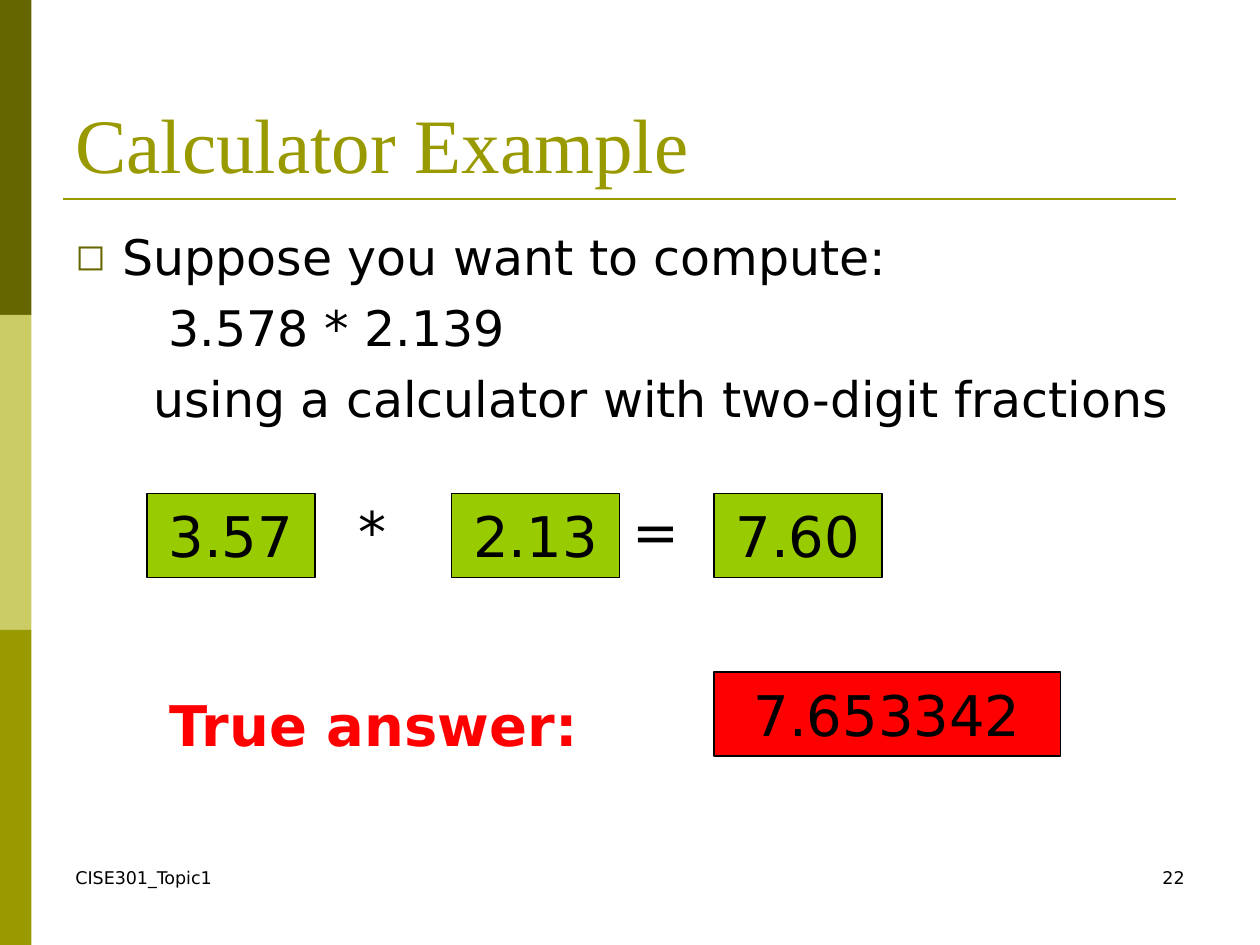
from lxml import etree
from pptx import Presentation
from pptx.dml.color import RGBColor
from pptx.enum.shapes import MSO_CONNECTOR, MSO_SHAPE
from pptx.enum.text import MSO_ANCHOR, PP_ALIGN
from pptx.oxml.ns import qn
from pptx.util import Pt

RECTANGLE = MSO_SHAPE.RECTANGLE
OVAL = MSO_SHAPE.OVAL
STRAIGHT = MSO_CONNECTOR.STRAIGHT
TOP, MIDDLE, BOTTOM = MSO_ANCHOR.TOP, MSO_ANCHOR.MIDDLE, MSO_ANCHOR.BOTTOM
LEFT, CENTER, RIGHT = PP_ALIGN.LEFT, PP_ALIGN.CENTER, PP_ALIGN.RIGHT

BLACK = RGBColor(0x00, 0x00, 0x00)
RED = RGBColor(0xFF, 0x00, 0x00)
GREEN = RGBColor(0x99, 0xCC, 0x00)
OLIVE = RGBColor(0x99, 0x99, 0x00)
DARK_OLIVE = RGBColor(0x66, 0x66, 0x00)
PALE_OLIVE = RGBColor(0xCC, 0xCC, 0x66)

SANS = "DejaVu Sans"
SERIF = "Times New Roman"
LINE_GAP = 6.8

TITLE = {"name": SERIF, "size": Pt(44)}
BODY = {"name": SANS, "size": Pt(28)}
NUMBER = {"name": SANS, "size": Pt(32)}
ANSWER = {"name": SANS, "size": Pt(32), "bold": True}
FOOTER = {"name": SANS, "size": Pt(10)}


def write(paragraph, text, style, color=BLACK, align=LEFT):
    paragraph.alignment = align
    run = paragraph.add_run()
    run.text = text
    for attribute, value in style.items():
        setattr(run.font, attribute, value)
    run.font.color.rgb = color


def add_frame(slide, box, anchor=TOP):
    frame = slide.shapes.add_textbox(*map(Pt, box)).text_frame
    frame.word_wrap = True
    frame.vertical_anchor = anchor
    return frame


def add_block(slide, kind, box, fill=None, outlined=False):
    block = slide.shapes.add_shape(kind, *map(Pt, box))
    block.shadow.inherit = False
    if fill is None:
        block.fill.background()
    else:
        block.fill.solid()
        block.fill.fore_color.rgb = fill
    if outlined:
        block.line.color.rgb = BLACK
        block.line.width = Pt(0.75)
    else:
        block.line.fill.background()
    return block


def add_number(slide, text, kind, box, fill=None):
    block = add_block(slide, kind, box, fill, outlined=fill is not None)
    frame = block.text_frame
    frame.word_wrap = False
    frame.vertical_anchor = MIDDLE
    write(frame.paragraphs[0], text, NUMBER, align=CENTER)


def add_sidebar(slide, box):
    left, top, width, height = box
    colors = (DARK_OLIVE, PALE_OLIVE, OLIVE)
    band = height / len(colors)
    for index, color in enumerate(colors):
        add_block(slide, RECTANGLE, (left, top + index * band, width, band), color)


def add_title(slide, box):
    left, top, width, height = box
    frame = add_frame(slide, box, BOTTOM)
    write(frame.paragraphs[0], "Calculator Example", TITLE, OLIVE)
    rule_y = Pt(top + height + 2.2)
    rule = slide.shapes.add_connector(
        STRAIGHT, Pt(left), rule_y, Pt(left + width - 12), rule_y)
    rule.line.color.rgb = OLIVE
    rule.line.width = Pt(1.5)
    etree.SubElement(rule._element.spPr, qn("a:effectLst"))


def indent(paragraph, margin, first_line=0):
    properties = paragraph._p.get_or_add_pPr()
    properties.set("marL", str(Pt(margin)))
    properties.set("indent", str(Pt(first_line)))
    return properties


def add_bullet(paragraph):
    properties = indent(paragraph, 27, -27)
    color = etree.SubElement(properties, qn("a:buClr"))
    etree.SubElement(color, qn("a:srgbClr"), val=str(DARK_OLIVE))
    etree.SubElement(properties, qn("a:buSzPct"), val="75000")
    etree.SubElement(properties, qn("a:buFont"), typeface=SANS)
    etree.SubElement(properties, qn("a:buChar"), char="◻")


def add_problem(slide, box):
    frame = add_frame(slide, box)
    question = frame.paragraphs[0]
    write(question, "Suppose you want to compute:", BODY)
    question.space_before = Pt(LINE_GAP)
    add_bullet(question)
    details = (("3.578 * 2.139", 53.4),
               ("using a calculator with two-digit fractions", 44.5))
    for text, margin in details:
        detail = frame.add_paragraph()
        write(detail, text, BODY)
        detail.space_before = Pt(LINE_GAP)
        indent(detail, margin)


def add_calculation(slide, box):
    left, top, width, height = box
    for text, offset in (("3.57", 0), ("2.13", 174), ("7.60", 324)):
        add_number(slide, text, RECTANGLE, (left + offset, top, 96, height), GREEN)
    for text, offset in (("*", 102), ("=", 264)):
        add_number(slide, text, OVAL, (left + offset, top, 54, height - 6))


def add_true_answer(slide, box):
    left, top, width, height = box
    label = add_frame(slide, (left, top + 7, 306, height - 3))
    write(label.paragraphs[0], "True answer:", ANSWER, RED)
    add_number(slide, "7.653342", RECTANGLE, (left + width - 198, top, 198, height), RED)


def add_footer(slide, box):
    left, top, width, height = box
    part = 168
    for text, x, align in (("CISE301_Topic1", left, LEFT),
                           ("22", left + width - part, RIGHT)):
        frame = add_frame(slide, (x, top, part, height))
        write(frame.paragraphs[0], text, FOOTER, align=align)


def main():
    deck = Presentation()
    deck.slide_width, deck.slide_height = Pt(720), Pt(540)
    slide = deck.slides.add_slide(deck.slide_layouts[6])
    add_sidebar(slide, (0, 0, 18, 540))
    add_title(slide, (36, 21.6, 648, 90))
    add_problem(slide, (36, 126, 648, 144))
    add_calculation(slide, (84, 282, 420, 48))
    add_true_answer(slide, (90, 384, 516, 48))
    add_footer(slide, (36, 492, 648, 36))
    deck.save("out.pptx")


if __name__ == "__main__":
    main()
